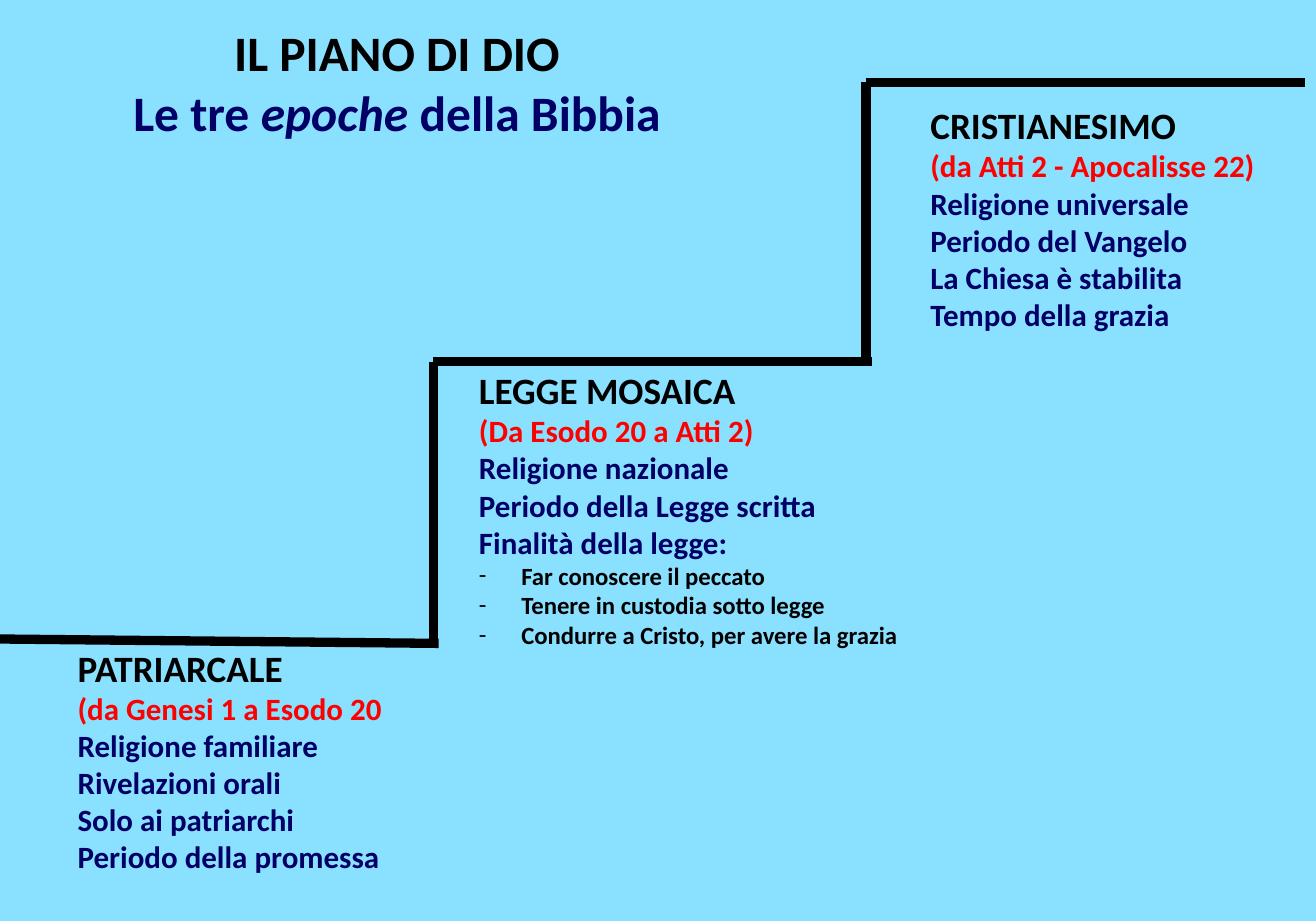
from lxml import etree
from pptx import Presentation
from pptx.dml.color import RGBColor
from pptx.enum.shapes import MSO_CONNECTOR
from pptx.enum.text import MSO_AUTO_SIZE, PP_ALIGN
from pptx.oxml.ns import qn
from pptx.util import Cm, Inches, Pt

STRAIGHT = MSO_CONNECTOR.STRAIGHT
GROW = MSO_AUTO_SIZE.SHAPE_TO_FIT_TEXT
LEFT, CENTER = PP_ALIGN.LEFT, PP_ALIGN.CENTER

COLUMNS, ROWS = 30, 21
WIDTH, HEIGHT = Cm(COLUMNS), Cm(ROWS)
FONT = "Calibri"
SKY, BLACK, NAVY, RED = "89E0FF", "000000", "000066", "FF0000"
BULLET_INDENT = Inches(0.38)

TITLE = {"size": Pt(32), "color": BLACK}
SUBTITLE = {"size": Pt(32), "color": NAVY}
HEADING = {"size": Pt(24), "color": BLACK}
PASSAGE = {"size": Pt(20), "color": RED}
FEATURE = {"size": Pt(20), "color": NAVY}
PURPOSE = {"size": Pt(16), "color": BLACK}

EPOCHS = [
    ((1.52, 14.58, 8.48, 5.56), "PATRIARCALE", "(da Genesi 1 a Esodo 20",
     ["Religione familiare", "Rivelazioni orali", "Solo ai patriarchi",
      "Periodo della promessa"], []),
    ((10.67, 8.25, 10.29, 6.76), "LEGGE MOSAICA", "(Da Esodo 20 a Atti 2)",
     ["Religione nazionale", "Periodo della Legge scritta",
      "Finalità della legge:"],
     ["Far conoscere il peccato", "Tenere in custodia sotto legge",
      "Condurre a Cristo, per avere la grazia"]),
    ((20.96, 2.21, 8.81, 5.56), "CRISTIANESIMO", "(da Atti 2 - Apocalisse 22)",
     ["Religione universale", "Periodo del Vangelo", "La Chiesa è stabilita",
      "Tempo della grazia"], []),
]

STEPS = [
    (0, 14.57, 10, 14.67),
    (9.88, 14.57, 9.88, 8.25),
    (9.88, 8.25, 19.87, 8.25),
    (19.74, 1.88, 19.74, 8.13),
    (19.74, 1.88, 29.74, 1.88),
]


def rgb(value):
    return RGBColor.from_string(value)


def grid(column, row):
    return round(column * WIDTH / COLUMNS), round(row * HEIGHT / ROWS)


def add_run(paragraph, text, style, italic=False):
    run = paragraph.add_run()
    run.text = text
    values = {"name": FONT, "size": style["size"], "bold": True, "italic": italic}
    for name, value in values.items():
        setattr(run.font, name, value)
    run.font.color.rgb = rgb(style["color"])


def add_bullet(paragraph):
    properties = paragraph._p.get_or_add_pPr()
    properties.set("marL", str(BULLET_INDENT))
    properties.set("indent", str(-BULLET_INDENT))
    etree.SubElement(properties, qn("a:buFont")).set("typeface", FONT)
    etree.SubElement(properties, qn("a:buChar")).set("char", "-")


def add_text(slide, place, lines, alignment=LEFT):
    column, row, columns, rows = place
    shape = slide.shapes.add_textbox(*grid(column, row), *grid(columns, rows))
    frame = shape.text_frame
    for name, value in {"word_wrap": True, "auto_size": GROW}.items():
        setattr(frame, name, value)
    for index, (style, pieces) in enumerate(lines):
        paragraph = frame.add_paragraph() if index else frame.paragraphs[0]
        paragraph.alignment = alignment
        if style is PURPOSE:
            add_bullet(paragraph)
        for position, piece in enumerate(pieces):
            add_run(paragraph, piece, style, italic=position == 1)


def add_epoch(slide, place, heading, passage, features, purposes):
    lines = [(HEADING, [heading]), (PASSAGE, [passage])]
    lines += [(FEATURE, [feature]) for feature in features]
    lines += [(PURPOSE, [purpose]) for purpose in purposes]
    add_text(slide, place, lines)


def add_step(slide, start_column, start_row, end_column, end_row):
    connector = slide.shapes.add_connector(
        STRAIGHT, *grid(start_column, start_row), *grid(end_column, end_row))
    connector.line.width = Pt(6)
    connector.line.color.rgb = rgb(BLACK)
    etree.SubElement(connector._element.spPr, qn("a:effectLst"))


def main():
    presentation = Presentation()
    presentation.slide_width, presentation.slide_height = WIDTH, HEIGHT
    slide = presentation.slides.add_slide(presentation.slide_layouts[6])
    slide.background.fill.solid()
    slide.background.fill.fore_color.rgb = rgb(SKY)

    add_text(slide, (0, 0.38, 18.11, 3), [
        (TITLE, ["IL PIANO DI DIO"]),
        (SUBTITLE, ["Le tre ", "epoche", " della Bibbia"]),
    ], CENTER)
    for epoch in EPOCHS:
        add_epoch(slide, *epoch)
    for step in STEPS:
        add_step(slide, *step)

    presentation.save("out.pptx")


if __name__ == "__main__":
    main()
